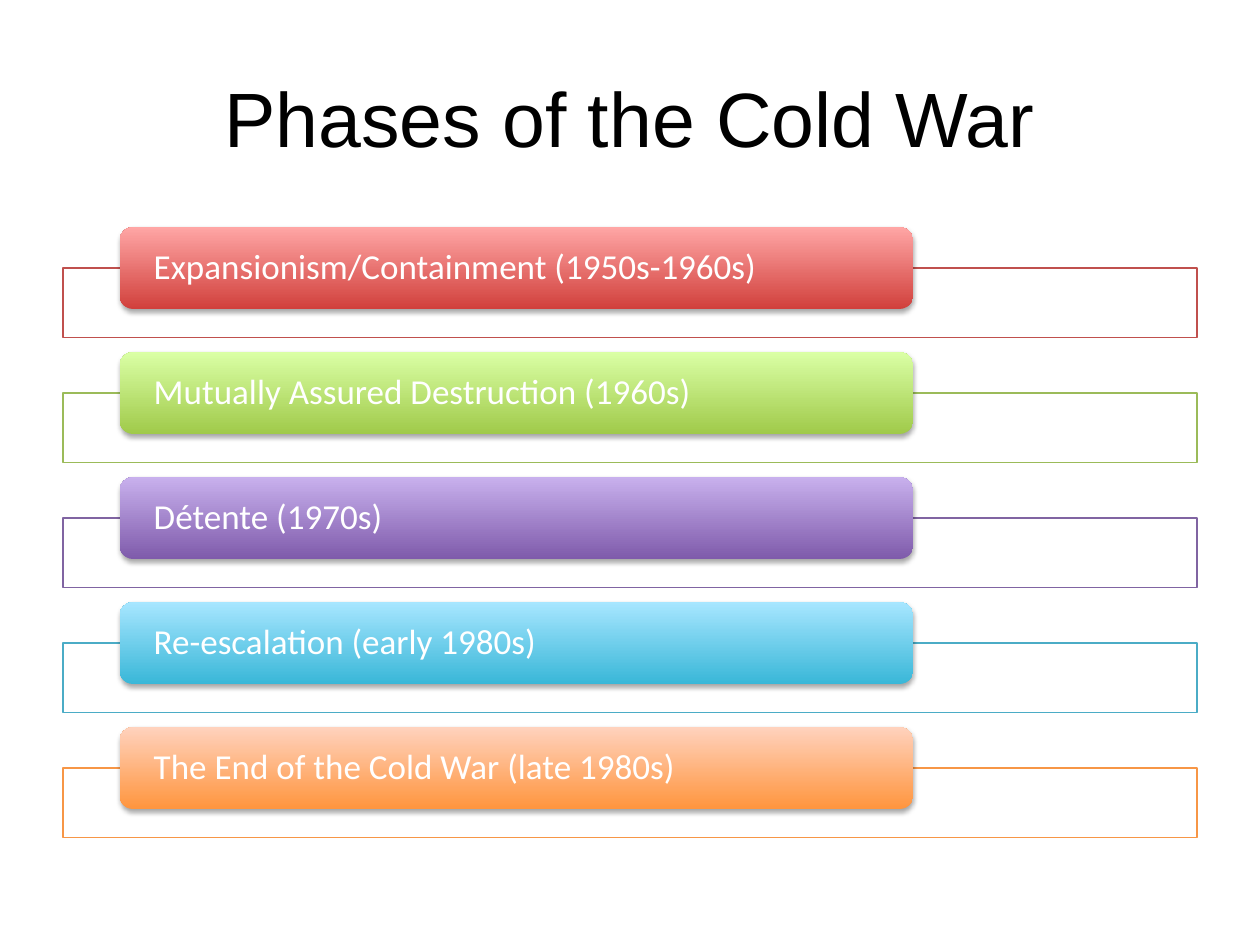
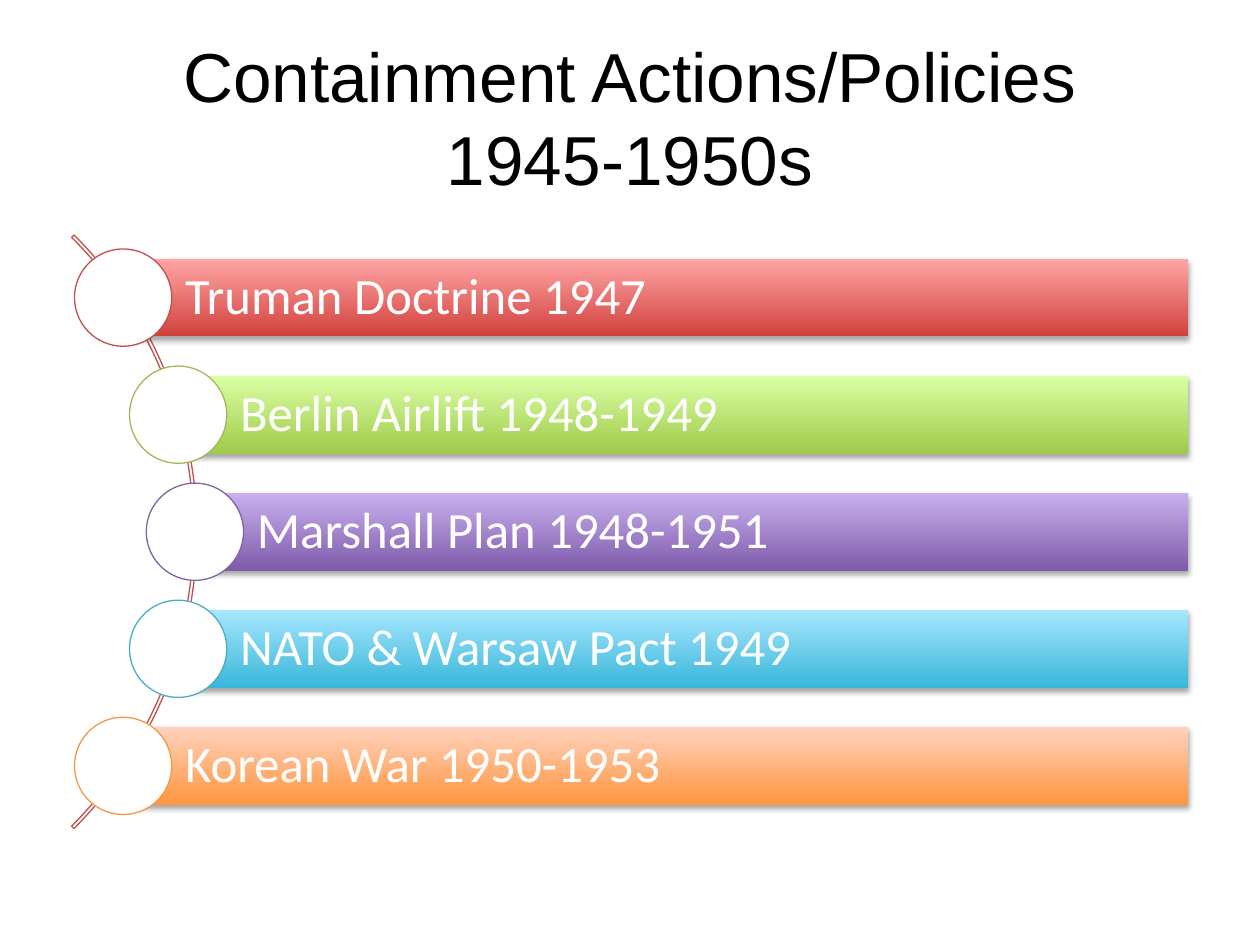
from dataclasses import dataclass
from math import sqrt

from lxml import etree
from pptx import Presentation
from pptx.dml.color import RGBColor
from pptx.enum import shapes, text
from pptx.oxml import ns
from pptx.util import Cm, Pt


@dataclass(frozen=True)
class Theme:
    title_font: str = "Arial"
    band_font: str = "Calibri"
    title_color: str = "000000"
    white: str = "FFFFFF"
    shadow: str = "000000"
    # outline, gradient bottom, gradient top
    accents: tuple = (
        ("C0504D", "D1403C", "FFA6A5"),
        ("9BBB59", "A0CA4A", "DAFFA5"),
        ("8064A2", "7F5BAB", "C8B0ED"),
        ("4BACC6", "39B7D8", "A7E6FF"),
        ("F79646", "FF953E", "FFD2BD"),
    )
    phase_size: float = 20
    action_size: float = 29
    line_width: float = 0.75


THEME = Theme()
rgb = RGBColor.from_string
Preset = shapes.MSO_SHAPE


def add_outlined(slide, preset, left, top, width, height, color):
    outlined = slide.shapes.add_shape(preset, Cm(left), Cm(top), Cm(width), Cm(height))
    outlined.shadow.inherit = False
    outlined.fill.solid()
    outlined.fill.fore_color.rgb = rgb(THEME.white)
    outlined.line.color.rgb = rgb(color)
    outlined.line.width = Pt(THEME.line_width)
    return outlined


def add_band(slide, preset, left, top, width, height, accent, label, size, indent):
    """Add a shaded band with a soft shadow and a left-aligned label."""
    band = slide.shapes.add_shape(preset, Cm(left), Cm(top), Cm(width), Cm(height))
    band.fill.gradient()
    band.fill.gradient_angle = 90
    for stop, color in zip(band.fill.gradient_stops, accent[1:]):
        stop.color.rgb = rgb(color)
    band.line.fill.background()

    band.shadow.inherit = False
    effects = band._element.spPr.find(ns.qn("a:effectLst"))
    shadow = etree.SubElement(effects, ns.qn("a:outerShdw"), blurRad=str(Pt(3.1)),
                              dist=str(Pt(1.8)), dir="5400000", rotWithShape="0")
    shadow_color = etree.SubElement(shadow, ns.qn("a:srgbClr"), val=THEME.shadow)
    etree.SubElement(shadow_color, ns.qn("a:alpha"), val="35000")

    frame = band.text_frame
    frame.text = label
    frame.word_wrap = True
    frame.vertical_anchor = text.MSO_ANCHOR.MIDDLE
    frame.margin_left = Cm(indent)
    frame.margin_right = Cm(0.2)
    frame.margin_top = frame.margin_bottom = 0
    paragraph = frame.paragraphs[0]
    paragraph.alignment = text.PP_ALIGN.LEFT
    paragraph.line_spacing = 0.9
    font = paragraph.runs[0].font
    font.name, font.size = THEME.band_font, Pt(size)
    font.color.rgb = rgb(THEME.white)


deck = Presentation()
deck.slide_width, deck.slide_height = Cm(25.4), Cm(19.05)

# Both slides share one title style
titled_slides = []
for heading, heading_size in (
    ("Phases of the Cold War", 44),
    ("Containment Actions/Policies\v1945-1950s", 39.6),
):
    slide = deck.slides.add_slide(deck.slide_layouts.get_by_name("Title Only"))
    title = slide.shapes.title
    title.left, title.top, title.width, title.height = Cm(1.27), Cm(0.76), Cm(22.86), Cm(3.18)
    title.text_frame.text = heading
    title.text_frame.auto_size = text.MSO_AUTO_SIZE.NONE
    title.text_frame.vertical_anchor = text.MSO_ANCHOR.MIDDLE
    paragraph = title.text_frame.paragraphs[0]
    paragraph.alignment = text.PP_ALIGN.CENTER
    for run in paragraph.runs:
        run.font.name, run.font.size = THEME.title_font, Pt(heading_size)
        run.font.color.rgb = rgb(THEME.title_color)
    titled_slides.append(slide)
phases_slide, actions_slide = titled_slides

# Phases: each rounded band overlaps a wide outlined box
phases = (
    "Expansionism/Containment (1950s-1960s)",
    "Mutually Assured Destruction (1960s)",
    "Détente (1970s)",
    "Re-escalation (early 1980s)",
    "The End of the Cold War (late 1980s)",
)
phase_top, phase_step, phase_height = 4.58, 2.52, 1.65
for row, (phase, accent) in enumerate(zip(phases, THEME.accents)):
    top = phase_top + row * phase_step
    add_outlined(phases_slide, Preset.RECTANGLE,
                 1.27, top + phase_height / 2, 22.86, 1.4, accent[0])
    add_band(phases_slide, Preset.ROUNDED_RECTANGLE, 2.41, top, 16, phase_height,
             accent, phase, THEME.phase_size, indent=0.61)

# Actions: circles sit along an arc, and each band starts at a circle's centre
actions = (
    "Truman Doctrine 1947",
    "Berlin Airlift 1948-1949",
    "Marshall Plan 1948-1951",
    "NATO & Warsaw Pact 1949",
    "Korean War 1950-1953",
)
arc_x, arc_y, arc_size, orbit = -4.49, 10.72, 16.92, 8.42
action_step, action_height, bands_right, circle_size = 2.36, 1.57, 23.95, 1.96
arc = add_outlined(actions_slide, Preset.BLOCK_ARC, arc_x - arc_size / 2,
                   arc_y - arc_size / 2, arc_size, arc_size, THEME.accents[0][0])
arc.fill.background()
for position, adjustment in enumerate((189, 27, 0.004)):
    arc.adjustments[position] = adjustment

for row, (action, accent) in enumerate(zip(actions, THEME.accents)):
    offset = (row - len(actions) // 2) * action_step
    center_x = arc_x + sqrt(orbit ** 2 - offset ** 2)
    center_y = arc_y + offset
    add_band(actions_slide, Preset.RECTANGLE, center_x, center_y - action_height / 2,
             bands_right - center_x, action_height,
             accent, action, THEME.action_size, indent=1.25)
    add_outlined(actions_slide, Preset.OVAL, center_x - circle_size / 2,
                 center_y - circle_size / 2, circle_size, circle_size, accent[0])

deck.save("out.pptx")
